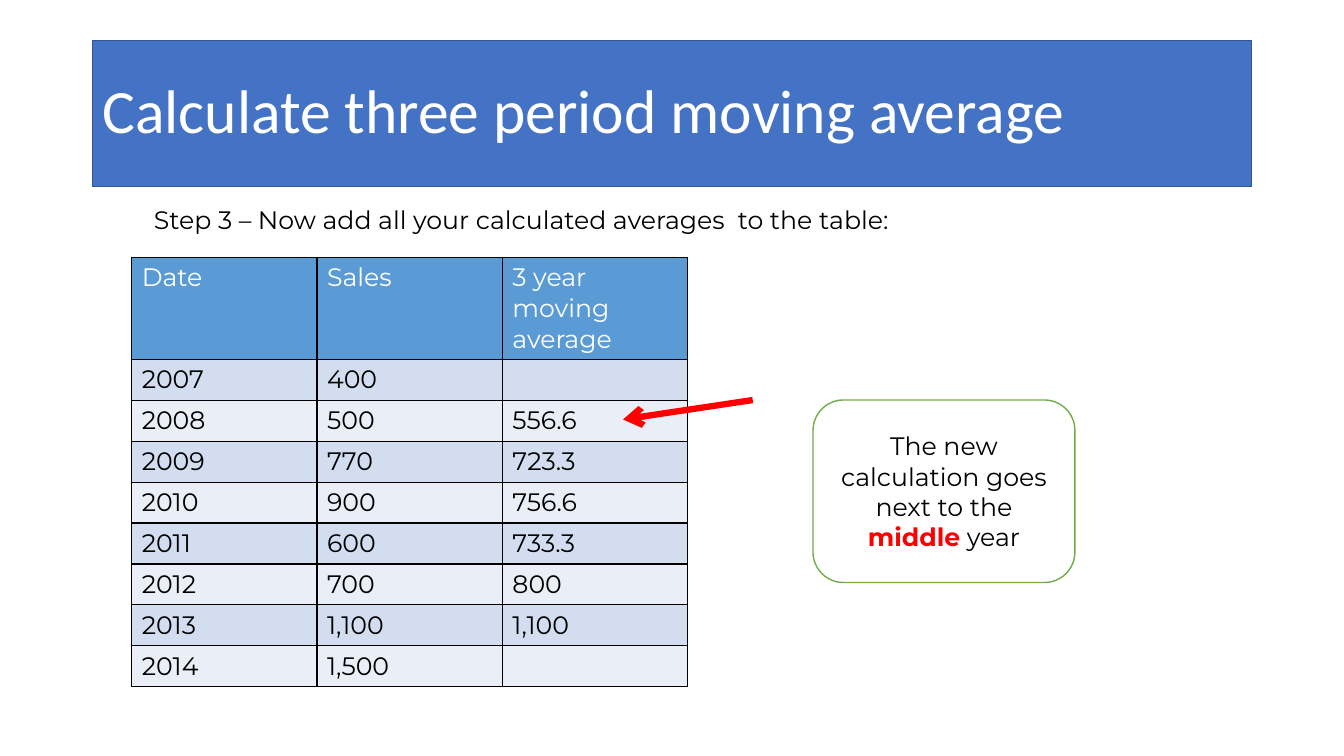
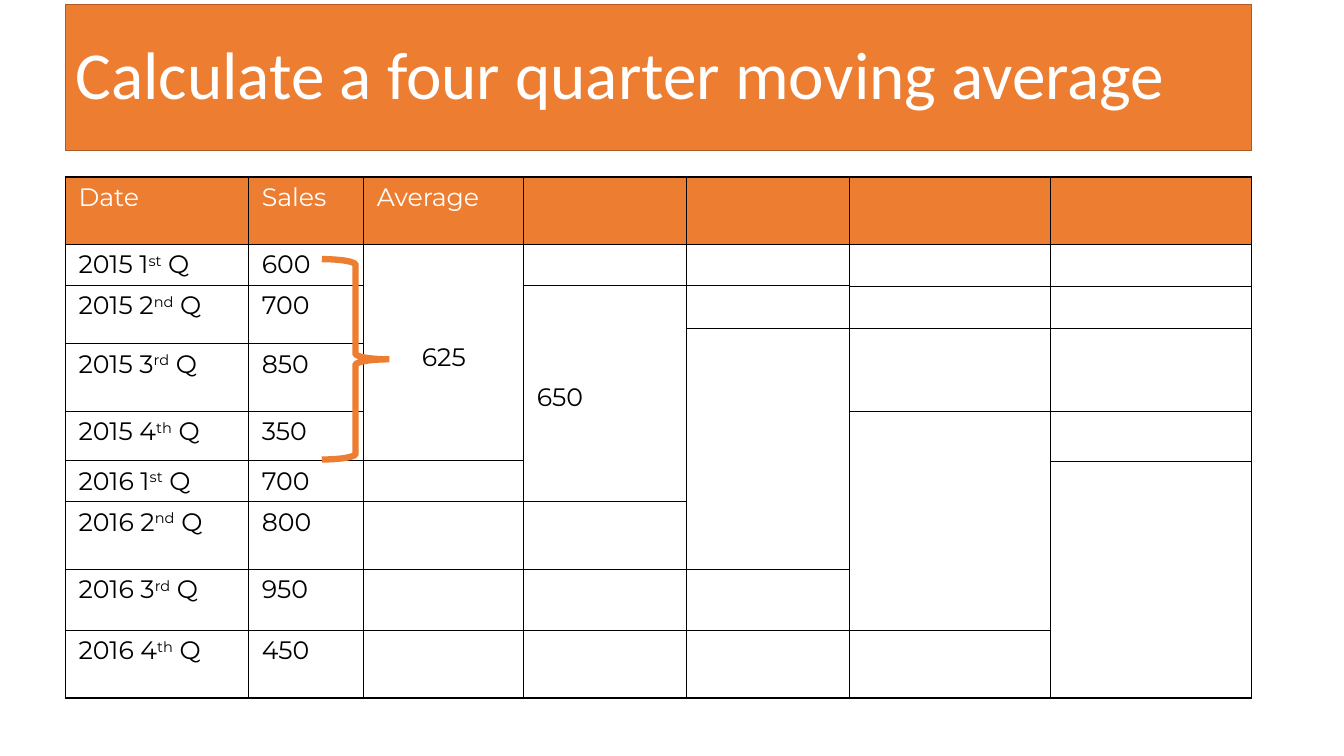
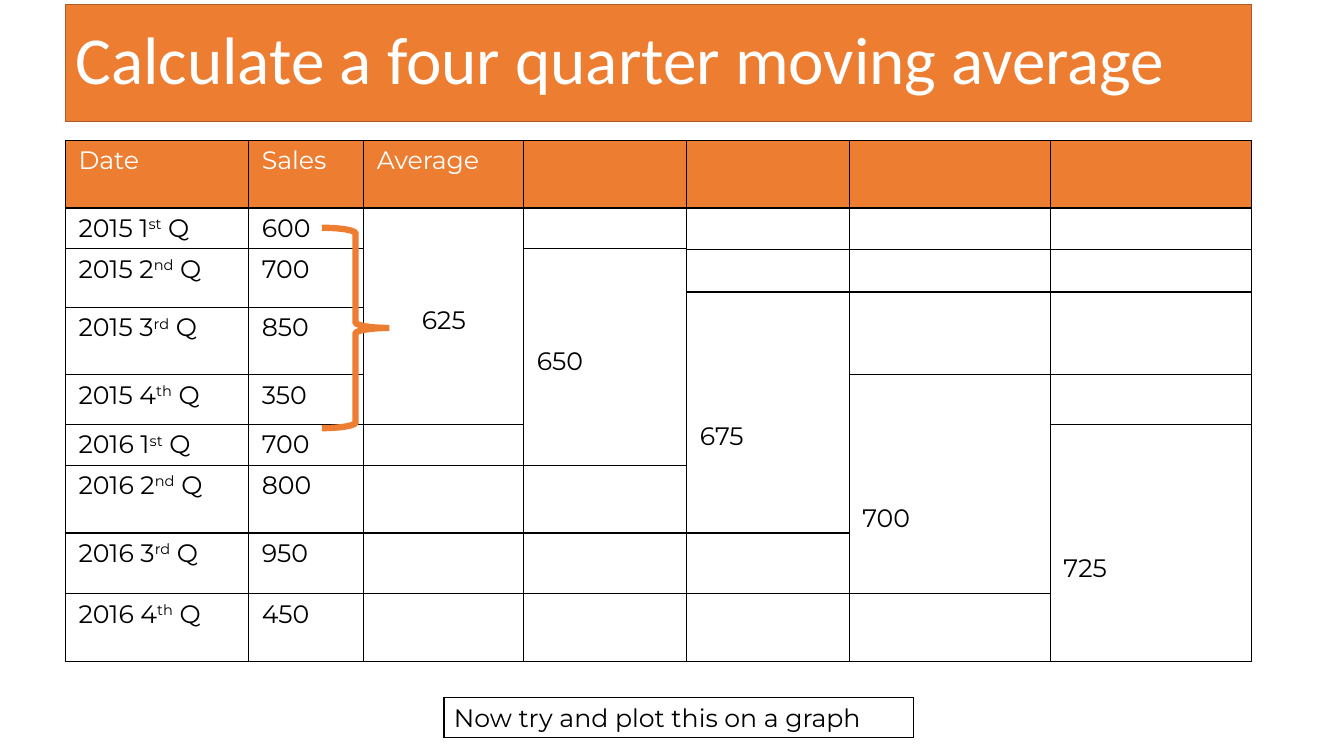
from dataclasses import dataclass

from lxml.etree import SubElement
from pptx import Presentation
from pptx.dml.color import RGBColor
from pptx.enum.shapes import MSO_CONNECTOR, MSO_SHAPE
from pptx.enum.text import MSO_ANCHOR, PP_ALIGN
from pptx.oxml.ns import qn
from pptx.util import Cm, Pt


@dataclass(frozen=True)
class Theme:
    white: str = "FFFFFF"
    black: str = "000000"
    red: str = "FF0000"
    green: str = "70AD47"
    blue: str = "4472C4"
    blue_edge: str = "325491"
    orange: str = "ED7D31"
    orange_edge: str = "AF5C24"
    table_head: str = "5B9BD5"
    bands: tuple = ("D2DEEF", "EAEFF7")
    title_font: str = "Calibri"
    body_font: str = "Montserrat"
    body_size: int = 18
    thin: float = 1
    thick: float = 4.5


T = Theme()

# Slide 1
YEAR_TITLE = "Calculate three period moving average"
STEP = "Step 3 – Now add all your calculated averages  to the table:"
YEAR_TABLE = [
    ("Date", "Sales", "3 year moving average"),
    ("2007", "400", ""),
    ("2008", "500", "556.6"),
    ("2009", "770", "723.3"),
    ("2010", "900", "756.6"),
    ("2011", "600", "733.3"),
    ("2012", "700", "800"),
    ("2013", "1,100", "1,100"),
    ("2014", "1,500", ""),
]
CALLOUT = [
    ("The new calculation goes next to the ", {}),
    ("middle", {"color": T.red, "bold": True}),
    (" year", {}),
]

# Slides 2 and 3
QUARTER_TITLE = "Calculate a four quarter moving average"
QUARTER_HEAD = ("Date", "Sales", "Average")
QUARTERS = [
    ("2015 1", "st", "600"),
    ("2015 2", "nd", "700"),
    ("2015 3", "rd", "850"),
    ("2015 4", "th", "350"),
    ("2016 1", "st", "700"),
    ("2016 2", "nd", "800"),
    ("2016 3", "rd", "950"),
    ("2016 4", "th", "450"),
]
AVERAGES = ("625", "650", "675", "700", "725")
PLOT_PROMPT = "Now try and plot this on a graph"

QUARTER_LEFT = 1.65
QUARTER_INSET = 0.33
QUARTER_WIDTHS = (4.62, 2.9, 4.03, 4.11, 4.09, 5.07, 5.07)
# Thin grid rows let the staggered cells of each column start at their own height
QUARTER_HEIGHTS = (1.7, 1.02, 0.01, 0.01, 1.07, 0.38, 1.7, 1.25, 0.01, 1.02,
                   1.71, 1.53, 1.71)
# Grid rows where the cells of each column begin, below the header
QUARTER_ROWS = (1, 2, 6, 7, 8, 10, 11, 12)
CELL_STARTS = (
    QUARTER_ROWS,
    QUARTER_ROWS,
    (1, 8, 10, 11, 12),
    (1, 2, 10, 11, 12),
    (1, 3, 5, 11, 12),
    (1, 4, 5, 7, 12),
    (1, 4, 5, 7, 9),
)
AVERAGE_ROWS = (1, 2, 5, 7, 9)
AVERAGE_DROPS = (2.45, 2.45, 3.24, 3.24, 3.24)


def rgb(value):
    return RGBColor.from_string(value)


def add_run(p, text, color=T.black, size=T.body_size, font=T.body_font,
            bold=False, superscript=False):
    r = p.add_run()
    r.text = text
    r.font.name, r.font.size, r.font.bold = font, Pt(size), bold
    r.font.color.rgb = rgb(color)
    if superscript:
        r._r.get_or_add_rPr().set("baseline", "30000")


def add_box(s, kind, box, fill, line, width=T.thin):
    sp = s.shapes.add_shape(kind, *map(Cm, box))
    sp.shadow.inherit = False
    if fill:
        sp.fill.solid()
        sp.fill.fore_color.rgb = rgb(fill)
    else:
        sp.fill.background()
    sp.line.color.rgb = rgb(line)
    sp.line.width = Pt(width)
    SubElement(sp.line._get_or_add_ln(), qn("a:miter"), lim="800000")
    sp.text_frame.vertical_anchor = MSO_ANCHOR.MIDDLE
    return sp


def add_title(s, text, box, fill, edge, size):
    sp = add_box(s, MSO_SHAPE.RECTANGLE, box, fill, edge)
    p = sp.text_frame.paragraphs[0]
    p.alignment, p.line_spacing = PP_ALIGN.LEFT, 0.9
    add_run(p, text, T.white, size, T.title_font)


def style_cell(cell, fill):
    tc_pr = cell._tc.get_or_add_tcPr()
    for side in ("lnL", "lnR", "lnT", "lnB"):
        ln = SubElement(tc_pr, qn(f"a:{side}"), w=str(Pt(T.thin)))
        SubElement(SubElement(ln, qn("a:solidFill")), qn("a:srgbClr"), val=T.black)
    cell.fill.solid()
    cell.fill.fore_color.rgb = rgb(fill)


def add_table(s, left, top, widths, heights, fills):
    """Add a bordered table with one fill colour per row."""
    frame = s.shapes.add_table(len(heights), len(widths), Cm(left), Cm(top),
                               Cm(sum(widths)), Cm(sum(heights)))
    table = frame.table
    table.first_row = table.horz_banding = False
    for column, width in zip(table.columns, widths):
        column.width = Cm(width)
    for row, height, fill in zip(table.rows, heights, fills):
        row.height = Cm(height)
        for cell in row.cells:
            style_cell(cell, fill)
    return table


def cell_paragraph(table, row, col):
    return table.cell(row, col).text_frame.paragraphs[0]


def add_arrow(s, start, end):
    line = s.shapes.add_connector(MSO_CONNECTOR.STRAIGHT, *map(Cm, start + end))
    line.line.color.rgb = rgb(T.red)
    line.line.width = Pt(T.thick)
    SubElement(line.line._get_or_add_ln(), qn("a:tailEnd"), type="arrow")
    SubElement(line._element.spPr, qn("a:effectLst"))


def add_quarter_table(s, top, averages):
    row_count = len(QUARTER_HEIGHTS)
    fills = [T.orange] + [T.white] * (row_count - 1)
    table = add_table(s, QUARTER_LEFT, top, QUARTER_WIDTHS, QUARTER_HEIGHTS, fills)
    for cell in table.iter_cells():
        cell.margin_left = cell.margin_right = Cm(QUARTER_INSET)
    for col, starts in enumerate(CELL_STARTS):
        for start, following in zip(starts, starts[1:] + (row_count,)):
            if following - start > 1:
                table.cell(start, col).merge(table.cell(following - 1, col))

    for col, text in enumerate(QUARTER_HEAD):
        add_run(cell_paragraph(table, 0, col), text, T.white)
    for row, (date, suffix, sales) in zip(QUARTER_ROWS, QUARTERS):
        p = cell_paragraph(table, row, 0)
        add_run(p, date)
        add_run(p, suffix, superscript=True)
        add_run(p, " Q")
        add_run(cell_paragraph(table, row, 1), sales)

    first_col = len(QUARTER_HEAD) - 1
    for i, (text, row, drop) in enumerate(zip(averages, AVERAGE_ROWS, AVERAGE_DROPS)):
        cell = table.cell(row, first_col + i)
        cell.margin_top = Cm(drop)
        p = cell.text_frame.paragraphs[0]
        p.alignment = PP_ALIGN.LEFT if i else PP_ALIGN.CENTER
        add_run(p, text)


def year_slide(s):
    add_title(s, YEAR_TITLE, (2.33, 1.02, 29.21, 3.68), T.blue, T.blue_edge, 44)

    count = len(YEAR_TABLE) - 1
    fills = [T.table_head] + [T.bands[i % 2] for i in range(count)]
    table = add_table(s, 3.32, 6.48, [4.67] * 3, [2.57] + [1.03] * count, fills)
    for i, row in enumerate(YEAR_TABLE):
        for j, text in enumerate(row):
            if text:
                add_run(cell_paragraph(table, i, j), text, T.black if i else T.white)

    tf = s.shapes.add_textbox(*map(Cm, (3.63, 5.11, 26.59, 1.4))).text_frame
    tf.word_wrap = True
    tf.paragraphs[0].line_spacing = 0.9
    add_run(tf.paragraphs[0], STEP)

    callout = add_box(s, MSO_SHAPE.ROUNDED_RECTANGLE, (20.49, 10.08, 6.6, 4.6),
                      T.white, T.green)
    p = callout.text_frame.paragraphs[0]
    p.alignment = PP_ALIGN.CENTER
    for text, style in CALLOUT:
        add_run(p, text, **style)
    add_arrow(s, (18.97, 10.08), (15.7, 10.57))


def quarter_slide(s, title_height, table_top, brace_top, averages):
    add_title(s, QUARTER_TITLE, (QUARTER_LEFT, 0.11, sum(QUARTER_WIDTHS), title_height),
              T.orange, T.orange_edge, 48)
    add_quarter_table(s, table_top, averages)
    add_box(s, MSO_SHAPE.RIGHT_BRACE, (8.11, brace_top, 1.7, 5.05), None,
            T.orange, T.thick)


def add_plot_prompt(s):
    sp = add_box(s, MSO_SHAPE.RECTANGLE, (11.19, 17.57, 11.84, 1.02), T.white, T.black)
    p = sp.text_frame.paragraphs[0]
    p.alignment = PP_ALIGN.LEFT
    add_run(p, PLOT_PROMPT)


def main():
    prs = Presentation()
    prs.slide_width, prs.slide_height = Cm(33.87), Cm(19.05)
    years, partial, complete = (prs.slides.add_slide(prs.slide_layouts[6])
                                for _ in range(3))
    year_slide(years)
    quarter_slide(partial, 3.68, 4.46, 6.53, AVERAGES[:2])
    quarter_slide(complete, 2.95, 3.54, 5.74, AVERAGES)
    add_plot_prompt(complete)
    prs.save("out.pptx")


if __name__ == "__main__":
    main()
